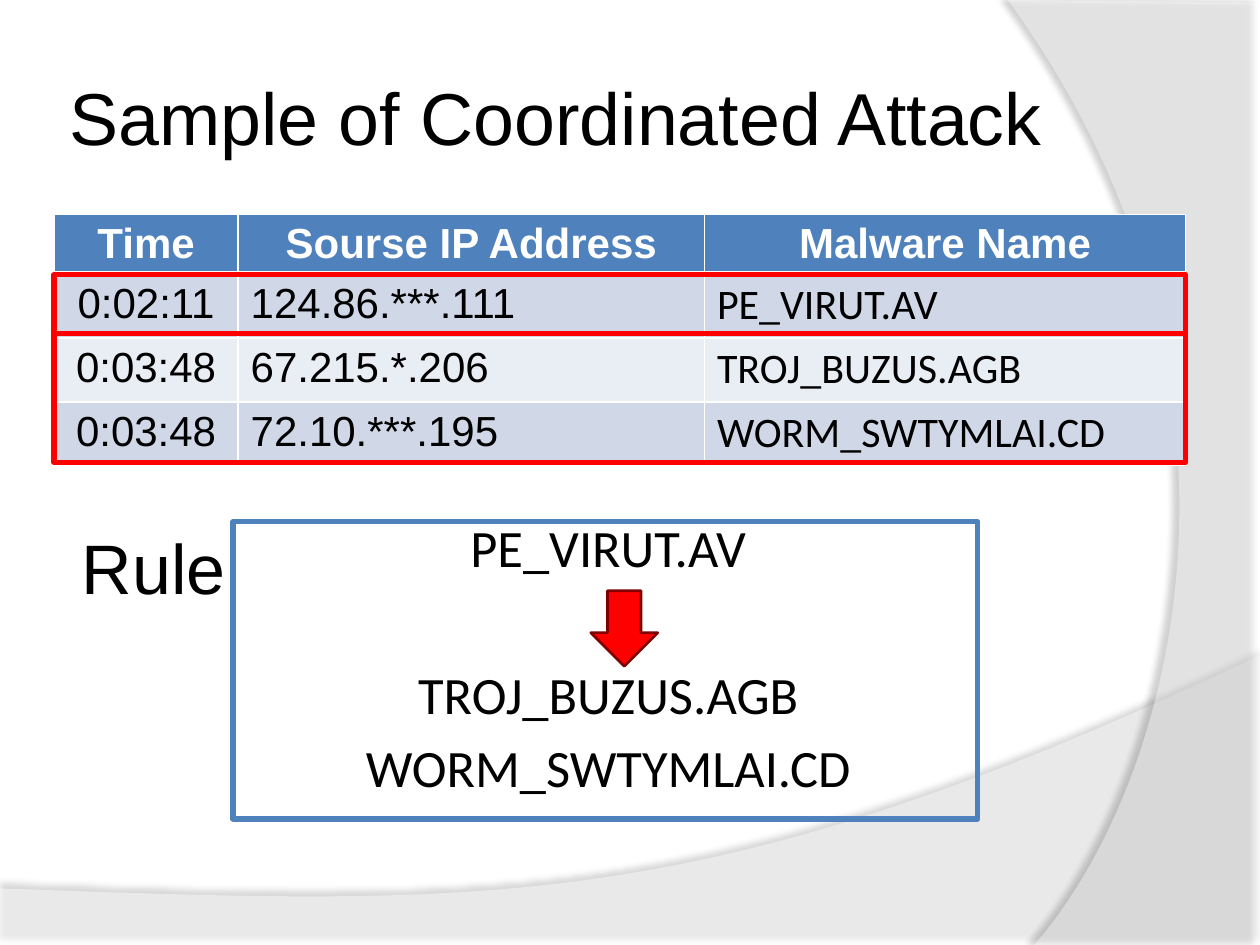
from dataclasses import dataclass
from lxml.etree import SubElement
from pptx import Presentation
from pptx.dml.color import RGBColor
from pptx.enum.shapes import MSO_SHAPE as Shape
from pptx.enum.text import MSO_ANCHOR as Anchor, PP_ALIGN as Align
from pptx.oxml.ns import qn
from pptx.util import Cm, Pt


@dataclass(frozen=True)
class Theme:
    black: str = "000000"
    white: str = "FFFFFF"
    blue: str = "4F81BD"
    red: str = "FF0000"
    dark_red: str = "800000"
    bands: tuple = ("D0D8E8", "E9EDF4")
    sans: str = "Arial"
    label: str = "Calibri"
    title_size: int = 42
    rule_size: int = 40
    flow_size: int = 30
    table_size: int = 24


THEME = Theme()

# Content
TITLE = "Sample of Coordinated Attack"
RULE_LABEL = "Rule"
HEADER = ("Time", "Sourse IP Address", "Malware Name")
ATTACKS = [
    ("0:02:11", "124.86.***.111", "PE_VIRUT.AV"),
    ("0:03:48", "67.215.*.206", "TROJ_BUZUS.AGB"),
    ("0:03:48", "72.10.***.195", "WORM_SWTYMLAI.CD"),
]
FLOW = [("PE_VIRUT.AV", 0), ("TROJ_BUZUS.AGB", 48), ("WORM_SWTYMLAI.CD", 6)]  # text, space before

# Geometry in centimetres
SLIDE_WIDTH, SLIDE_HEIGHT = 25.4, 19.05
TABLE_LEFT, TABLE_TOP = 1.09, 4.32
COLUMN_WIDTHS = (3.71, 9.4, 9.7)
ROW_HEIGHTS = (1.18, 1.29, 1.29, 1.29)
HIGHLIGHTS = [(5.54, 1.19), (6.73, 2.59)]  # top, height
RULE_BOX = (4.7, 10.52, 15.01, 5.99)
# Background sweeps: start, Bezier controls and end, corners, opacity, shadow
SWEEPS = [
    dict(curve=((25.4, 13.21), (14.2, 18.52), (9.93, 18.26), (0, 17.91)),
         corners=[(0, 19.07), (25.4, 19.07)], opacity=45,
         shadow=dict(opacity=35, blur=4, distance=3.5, angle=270)),
    dict(curve=((20.85, 19.05), (23.75, 15.72), (25.86, 7.62), (20.32, 0)),
         corners=[(25.4, 0.05), (25.4, 19.05)], opacity=40,
         shadow=dict(opacity=45, blur=4, distance=4, angle=180)),
]


def color(value):
    return RGBColor.from_string(value)


def write(frame, text, *, size, font=THEME.sans, ink=THEME.black, bold=False,
          align=Align.LEFT, before=0, add=False):
    paragraph = frame.add_paragraph() if add else frame.paragraphs[0]
    paragraph.alignment = align
    paragraph.space_before = Pt(before)
    run = paragraph.add_run()
    run.text = text
    run.font.name, run.font.size, run.font.bold = font, Pt(size), bold
    run.font.color.rgb = color(ink)


def add_text_box(slide, left, top, width, height):
    frame = slide.shapes.add_textbox(Cm(left), Cm(top), Cm(width), Cm(height)).text_frame
    frame.word_wrap = True
    return frame


def add_shape(slide, kind, box, line, weight, fill=None):
    shape = slide.shapes.add_shape(kind, *map(Cm, box))
    shape.shadow.inherit = False
    if fill:
        shape.fill.solid()
        shape.fill.fore_color.rgb = color(fill)
    else:
        shape.fill.background()
    shape.line.color.rgb = color(line)
    shape.line.width = Pt(weight)
    return shape


def set_opacity(color_element, percent):
    SubElement(color_element, qn("a:alpha"), val=str(percent * 1000))


def bezier(points, steps=48):
    for step in range(steps + 1):
        t = step / steps
        weights = ((1 - t) ** 3, 3 * t * (1 - t) ** 2, 3 * t * t * (1 - t), t ** 3)
        yield tuple(sum(w * p[axis] for w, p in zip(weights, points)) for axis in (0, 1))


def add_sweep(slide, position, curve, corners, opacity, shadow):
    start, *rest = [(Cm(x), Cm(y)) for x, y in [*bezier(curve), *corners]]
    builder = slide.shapes.build_freeform(*start)
    builder.add_line_segments(rest, close=True)
    shape = builder.convert_to_shape()
    shape.line.fill.background()
    shape.fill.solid()
    shape.fill.fore_color.rgb = color(THEME.white)
    shape.shadow.inherit = False
    properties = shape._element.spPr
    set_opacity(properties.find(qn("a:solidFill"))[0], opacity)
    outer = SubElement(properties.find(qn("a:effectLst")), qn("a:outerShdw"),
                       blurRad=str(Pt(shadow["blur"])), dist=str(Pt(shadow["distance"])),
                       dir=str(shadow["angle"] * 60000), algn="ctr", rotWithShape="0")
    set_opacity(SubElement(outer, qn("a:srgbClr"), val=THEME.black), shadow["opacity"])
    slide.shapes._spTree.insert(2 + position, shape._element)  # behind the title


def style_cell(cell, fill, top, bottom):
    properties = cell._tc.get_or_add_tcPr()
    for side, weight in (("L", 1), ("R", 1), ("T", top), ("B", bottom)):
        line = SubElement(properties, qn(f"a:ln{side}"), w=str(Pt(weight)))
        SubElement(SubElement(line, qn("a:solidFill")), qn("a:srgbClr"), val=THEME.white)
    cell.fill.solid()
    cell.fill.fore_color.rgb = color(fill)


def add_attack_table(slide):
    rows = [HEADER, *ATTACKS]
    table = slide.shapes.add_table(
        len(rows), len(HEADER), Cm(TABLE_LEFT), Cm(TABLE_TOP),
        Cm(sum(COLUMN_WIDTHS)), Cm(sum(ROW_HEIGHTS))).table
    for column, width in zip(table.columns, COLUMN_WIDTHS):
        column.width = Cm(width)
    for r, values in enumerate(rows):
        table.rows[r].height = Cm(ROW_HEIGHTS[r])
        header = r == 0
        for c, value in enumerate(values):
            cell = table.cell(r, c)
            style_cell(cell, THEME.blue if header else THEME.bands[(r - 1) % 2],
                       top=3 if r == 1 else 1, bottom=3 if header else 1)
            write(cell.text_frame, value, size=THEME.table_size, bold=header,
                  font=THEME.label if c == 2 and not header else THEME.sans,
                  ink=THEME.white if header else THEME.black,
                  align=Align.CENTER if header or c == 0 else Align.LEFT)


def main():
    presentation = Presentation()
    presentation.slide_width, presentation.slide_height = Cm(SLIDE_WIDTH), Cm(SLIDE_HEIGHT)
    slide = presentation.slides.add_slide(presentation.slide_layouts[5])

    # Background
    for position, sweep in enumerate(SWEEPS):
        add_sweep(slide, position, **sweep)

    # Title
    title = slide.shapes.title
    title.left, title.top, title.width, title.height = map(Cm, (1.27, 0.76, 20.75, 3.18))
    frame = title.text_frame
    frame.vertical_anchor = Anchor.MIDDLE
    frame.margin_left = frame.margin_right = frame.margin_top = frame.margin_bottom = Cm(0.13)
    write(frame, TITLE, size=THEME.title_size)

    # Attack log with highlighted groups
    add_attack_table(slide)
    for top, height in HIGHLIGHTS:
        add_shape(slide, Shape.RECTANGLE, (TABLE_LEFT, top, sum(COLUMN_WIDTHS), height),
                  THEME.red, 3)

    # Rule: the first malware leads to the other two
    flow = add_text_box(slide, 4.76, 10.25, 15.01, 5.9)
    for index, (name, before) in enumerate(FLOW):
        write(flow, name, size=THEME.flow_size, font=THEME.label, align=Align.CENTER,
              before=before, add=index > 0)
    add_shape(slide, Shape.DOWN_ARROW, (11.91, 11.91, 1.35, 1.52),
              THEME.dark_red, 1.5, fill=THEME.red)
    add_shape(slide, Shape.RECTANGLE, RULE_BOX, THEME.blue, 3)
    write(add_text_box(slide, 0, 10.44, 6.2, 1.96), RULE_LABEL,
          size=THEME.rule_size, align=Align.CENTER)

    presentation.save("out.pptx")


if __name__ == "__main__":
    main()
